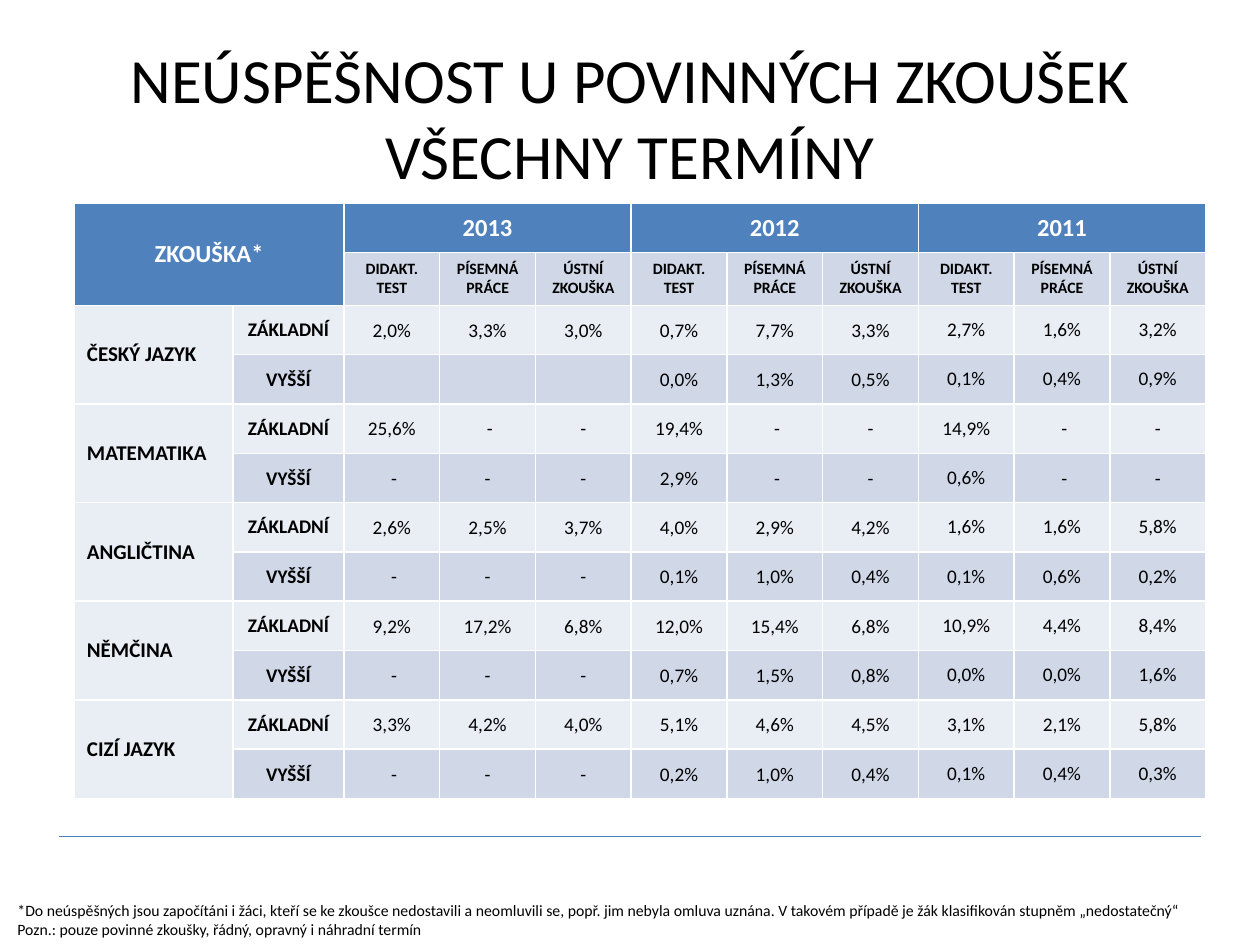
from lxml.etree import SubElement as add_element
from pptx import Presentation
from pptx.dml.color import RGBColor
from pptx.enum.shapes import MSO_CONNECTOR as Connector
from pptx.enum.text import MSO_ANCHOR as Anchor, PP_ALIGN as Align
from pptx.oxml.ns import qn
from pptx.util import Emu, Inches, Pt

WIDTH, HEIGHT = Inches(10), Inches(7.5)
BLUE, PALE, MID, WHITE, BLACK = "4F81BD", "E9EDF4", "D0D8E8", "FFFFFF", "000000"
FIRST_DASH = " -"
TITLE = "NEÚSPĚŠNOST U POVINNÝCH ZKOUŠEK\vVŠECHNY TERMÍNY"
NOTES = [
    "*Do neúspěšných jsou započítáni i žáci, kteří se ke zkoušce nedostavili a neomluvili se, "
    "popř. jim nebyla omluva uznána. V takovém případě je žák klasifikován stupněm „nedostatečný“",
    "Pozn.: pouze povinné zkoušky, řádný, opravný i náhradní termín",
]
YEARS = ["2013", "2012", "2011"]
PARTS = ["DIDAKT. TEST", "PÍSEMNÁ PRÁCE", "ÚSTNÍ ZKOUŠKA"]
LEVELS = [("ZÁKLADNÍ", PALE), ("VYŠŠÍ", MID)]
RESULTS = {
    "ČESKÝ JAZYK": ("2,0% 3,3% 3,0% 0,7% 7,7% 3,3% 2,7% 1,6% 3,2%",
                    "0,0% 1,3% 0,5% 0,1% 0,4% 0,9%"),
    "MATEMATIKA": ("25,6% - - 19,4% - - 14,9% - -",
                   "- - - 2,9% - - 0,6% - -"),
    "ANGLIČTINA": ("2,6% 2,5% 3,7% 4,0% 2,9% 4,2% 1,6% 1,6% 5,8%",
                   "- - - 0,1% 1,0% 0,4% 0,1% 0,6% 0,2%"),
    "NĚMČINA": ("9,2% 17,2% 6,8% 12,0% 15,4% 6,8% 10,9% 4,4% 8,4%",
                "- - - 0,7% 1,5% 0,8% 0,0% 0,0% 1,6%"),
    "CIZÍ JAZYK": ("3,3% 4,2% 4,0% 5,1% 4,6% 4,5% 3,1% 2,1% 5,8%",
                   "- - - 0,2% 1,0% 0,4% 0,1% 0,4% 0,3%"),
}


def across(percent):
    return Emu(round(WIDTH * percent / 100))


def down(percent):
    return Emu(round(HEIGHT * percent / 100))


def area(left, top, width, height):
    return across(left), down(top), across(width), down(height)


def color(value):
    return RGBColor.from_string(value)


def apply(target, formats):
    for name, value in formats.items():
        setattr(target, name, value)


def write(para, text, size, ink=BLACK, bold=False, align=Align.CENTER):
    para.text = text
    para.alignment = align
    for span in para.runs:
        apply(span.font, {"name": "Calibri", "size": Pt(size), "bold": bold})
        span.font.color.rgb = color(ink)


def add_text(page, place, lines, size, align, anchor):
    box = page.shapes.add_textbox(*place)
    frame = box.text_frame
    apply(frame, {"word_wrap": True, "vertical_anchor": anchor})
    for index, line in enumerate(lines):
        para = frame.add_paragraph() if index else frame.paragraphs[0]
        write(para, line, size, align=align)


def add_rule(page, left, right, top):
    rule = page.shapes.add_connector(
        Connector.STRAIGHT, across(left), down(top), across(right), down(top))
    rule.line.width = Pt(0.75)
    rule.line.color.rgb = color("4B7EBC")
    add_element(rule._element.spPr, qn("a:effectLst"))


def add_borders(cell):
    properties = cell._tc.get_or_add_tcPr()
    for index, side in enumerate(("lnL", "lnR", "lnT", "lnB")):
        border = properties.makeelement(qn(f"a:{side}"), {"w": str(Pt(1))})
        fill = add_element(border, qn("a:solidFill"))
        add_element(fill, qn("a:srgbClr"), val=WHITE)
        properties.insert(index, border)


def fill_cell(cell, text, size, fill, tight=False, **style):
    cell.fill.solid()
    cell.fill.fore_color.rgb = color(fill)
    cell.vertical_anchor = Anchor.MIDDLE
    if tight:
        gap = Inches(0.01)
        apply(cell, {"margin_left": gap, "margin_top": gap,
                     "margin_right": gap, "margin_bottom": 0})
    write(cell.text_frame.paragraphs[0], text, size, **style)


def fill_header(table):
    heading = {"size": 14, "fill": BLUE, "ink": WHITE, "bold": True}
    table.cell(0, 0).merge(table.cell(1, 1))
    fill_cell(table.cell(0, 0), "ZKOUŠKA*", **heading)
    for group, year in enumerate(YEARS):
        first = 2 + group * len(PARTS)
        table.cell(0, first).merge(table.cell(0, first + len(PARTS) - 1))
        fill_cell(table.cell(0, first), year, **heading)
        for offset, part in enumerate(PARTS):
            fill_cell(table.cell(1, first + offset), part, 9, MID, bold=True)


def fill_values(table, row, values, fill):
    count = len(YEARS) * len(PARTS)
    values = [""] * (count - len(values)) + values
    for index, value in enumerate(values):
        offset = index % len(PARTS)
        latest = index >= count - len(PARTS)
        starts_dashes = value == "-" and (offset == 0 or values[index - 1] != "-")
        text = FIRST_DASH if starts_dashes else value
        fill_cell(table.cell(row, 2 + index), text, 11, fill,
                  tight=not latest or value == "-")


def fill_subjects(table):
    for index, (subject, results) in enumerate(RESULTS.items()):
        top = 2 + index * len(LEVELS)
        table.cell(top, 0).merge(table.cell(top + 1, 0))
        fill_cell(table.cell(top, 0), subject, 12, PALE, bold=True, align=Align.LEFT)
        for offset, ((level, fill), values) in enumerate(zip(LEVELS, results)):
            row = top + offset
            fill_cell(table.cell(row, 1), level, 11, fill, tight=offset == 1, bold=True)
            fill_values(table, row, values.split(), fill)


def add_results(page, place):
    rows = 2 + len(RESULTS) * len(LEVELS)
    columns = 2 + len(YEARS) * len(PARTS)
    table = page.shapes.add_table(rows, columns, *place).table
    width, height = place[2:]
    labels, parts_height = [across(12.6), across(8.8)], down(5.6)
    value_width = (width - sum(labels)) // (columns - 2)
    row_height = (height - parts_height) // (rows - 1)
    for index, column in enumerate(table.columns):
        column.width = labels[index] if index < 2 else value_width
    for index, row in enumerate(table.rows):
        row.height = parts_height if index == 1 else row_height
    fill_header(table)
    fill_subjects(table)
    for cell in table.iter_cells():
        add_borders(cell)


def main():
    deck = Presentation()
    apply(deck, {"slide_width": WIDTH, "slide_height": HEIGHT})
    page = deck.slides.add_slide(deck.slide_layouts[6])
    add_rule(page, 4.7, 95.3, 88.5)
    add_text(page, area(5, 4, 90, 16.67), [TITLE], 36, Align.CENTER, Anchor.MIDDLE)
    add_results(page, area(5.9, 21.5, 89.8, 63))
    add_text(page, area(0.4, 94.67, 99.6, 5.33), NOTES, 9, Align.LEFT, Anchor.TOP)
    deck.save("out.pptx")


if __name__ == "__main__":
    main()
